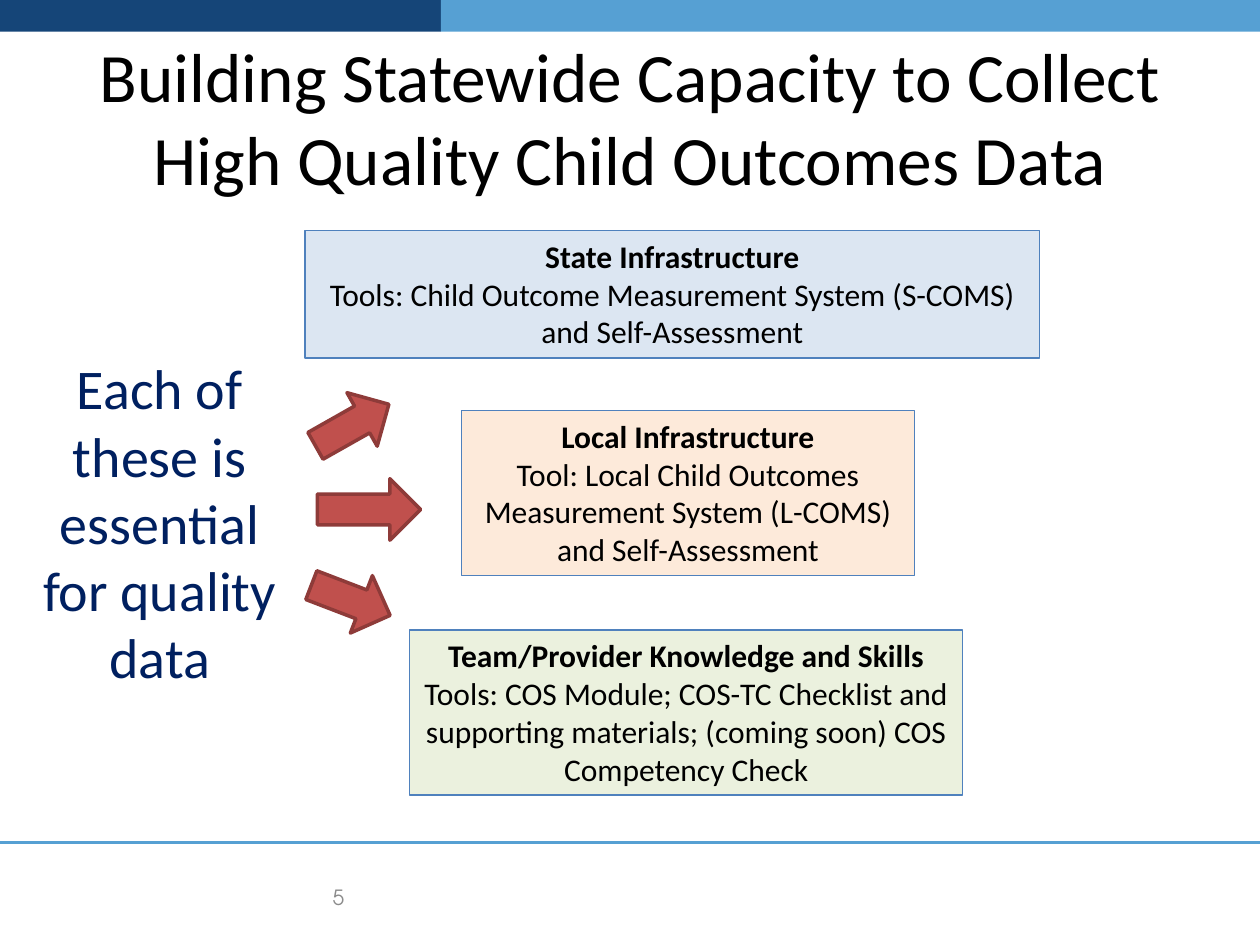
from dataclasses import dataclass

from lxml import etree
from pptx import Presentation
from pptx.dml.color import RGBColor
from pptx.enum.shapes import MSO_CONNECTOR, MSO_SHAPE
from pptx.enum.text import MSO_ANCHOR, PP_ALIGN
from pptx.oxml.ns import qn
from pptx.util import Cm, Pt

RECT, ARROW = MSO_SHAPE.RECTANGLE, MSO_SHAPE.RIGHT_ARROW
STRAIGHT = MSO_CONNECTOR.STRAIGHT
CENTER, RIGHT = PP_ALIGN.CENTER, PP_ALIGN.RIGHT
TOP, MIDDLE = MSO_ANCHOR.TOP, MSO_ANCHOR.MIDDLE
WIDTH, HEIGHT = 25.4, 19.05
TITLE_ONLY = 5


@dataclass(frozen=True)
class Theme:
    font: str = "Calibri"
    number_font: str = "TeX Gyre Adventor"
    title_size: float = 39.6
    note_size: float = 32
    box_size: float = 18
    number_size: float = 12
    text: str = "000000"
    note: str = "002060"
    number: str = "8C8C8C"
    navy: str = "154578"
    sky: str = "56A0D3"
    box_line: str = "4F81BD"
    state: str = "DCE6F2"
    local: str = "FDEADA"
    team: str = "EBF1DE"
    arrow: str = "C0504D"
    arrow_line: str = "8E3B39"


THEME = Theme()

# heading, tools, fill, (left, top, width, height) in cm
LEVELS = [
    ("State Infrastructure",
     "Tools: Child Outcome Measurement System (S-COMS) and Self-Assessment",
     THEME.state, (6.15, 4.65, 14.81, 2.57)),
    ("Local Infrastructure",
     "Tool: Local Child Outcomes Measurement System (L-COMS) and Self-Assessment",
     THEME.local, (9.3, 8.28, 9.14, 3.33)),
    ("Team/Provider Knowledge and Skills",
     "Tools: COS Module; COS-TC Checklist and supporting materials; "
     "(coming soon) COS Competency Check",
     THEME.team, (8.26, 12.7, 11.15, 3.33)),
]

# (left, top, width, height) in cm, rotation in degrees
ARROWS = [
    ((6.25, 7.95, 1.7, 1.24), 330.5),
    ((6.4, 9.65, 2.08, 1.24), 0),
    ((6.22, 11.48, 1.7, 1.24), 21),
]


def cm(box):
    return [Cm(v) for v in box]


def rgb(color):
    return RGBColor.from_string(color)


def write(tf, *lines, size, color=THEME.text, font=THEME.font, align=CENTER,
          anchor=TOP, bold_first=False):
    """Fill a text frame with one paragraph per line."""
    tf.word_wrap = True
    tf.vertical_anchor = anchor
    for i, line in enumerate(lines):
        p = tf.paragraphs[0] if i == 0 else tf.add_paragraph()
        p.alignment = align
        r = p.add_run()
        r.text = line
        r.font.name = font
        r.font.size = Pt(size)
        r.font.bold = bold_first and i == 0
        r.font.color.rgb = rgb(color)


def add_block(slide, kind, box, fill, line=None, line_width=0.75):
    sp = slide.shapes.add_shape(kind, *cm(box))
    sp.shadow.inherit = False
    sp.fill.solid()
    sp.fill.fore_color.rgb = rgb(fill)
    if line:
        sp.line.color.rgb = rgb(line)
        sp.line.width = Pt(line_width)
    else:
        sp.line.fill.background()
    return sp


def add_rule(slide, y):
    rule = slide.shapes.add_connector(STRAIGHT, 0, Cm(y), Cm(WIDTH), Cm(y))
    rule.line.color.rgb = rgb(THEME.sky)
    rule.line.width = Pt(1.5)
    etree.SubElement(rule._element.spPr, qn("a:effectLst"))


def add_text(slide, box, text, **fmt):
    write(slide.shapes.add_textbox(*cm(box)).text_frame, text, **fmt)


def add_title(slide, box, text):
    title = slide.shapes.title
    title.left, title.top, title.width, title.height = cm(box)
    write(title.text_frame, text, size=THEME.title_size, anchor=MIDDLE)


def main():
    prs = Presentation()
    prs.slide_width, prs.slide_height = Cm(WIDTH), Cm(HEIGHT)
    slide = prs.slides.add_slide(prs.slide_layouts[TITLE_ONLY])

    split, bar_height = 8.89, 0.64
    add_block(slide, RECT, (0, 0, split, bar_height), THEME.navy)
    add_block(slide, RECT, (split, 0, WIDTH - split, bar_height), THEME.sky)
    add_rule(slide, 16.99)

    add_title(slide, (1.27, 0.76, 22.86, 3.18),
              "Building Statewide Capacity to Collect High Quality Child Outcomes Data")
    add_text(slide, (1.27, 17.58, 5.92, 1.02), "5", size=THEME.number_size,
             color=THEME.number, font=THEME.number_font, align=RIGHT, anchor=MIDDLE)

    for heading, tools, fill, box in LEVELS:
        sp = add_block(slide, RECT, box, fill, THEME.box_line)
        write(sp.text_frame, heading, tools, size=THEME.box_size, bold_first=True)

    add_text(slide, (0.36, 7.01, 5.72, 7.09),
             "Each of these is essential for quality data",
             size=THEME.note_size, color=THEME.note)
    for box, angle in ARROWS:
        sp = add_block(slide, ARROW, box, THEME.arrow, THEME.arrow_line, 2)
        sp.rotation = angle

    prs.save("out.pptx")


if __name__ == "__main__":
    main()
